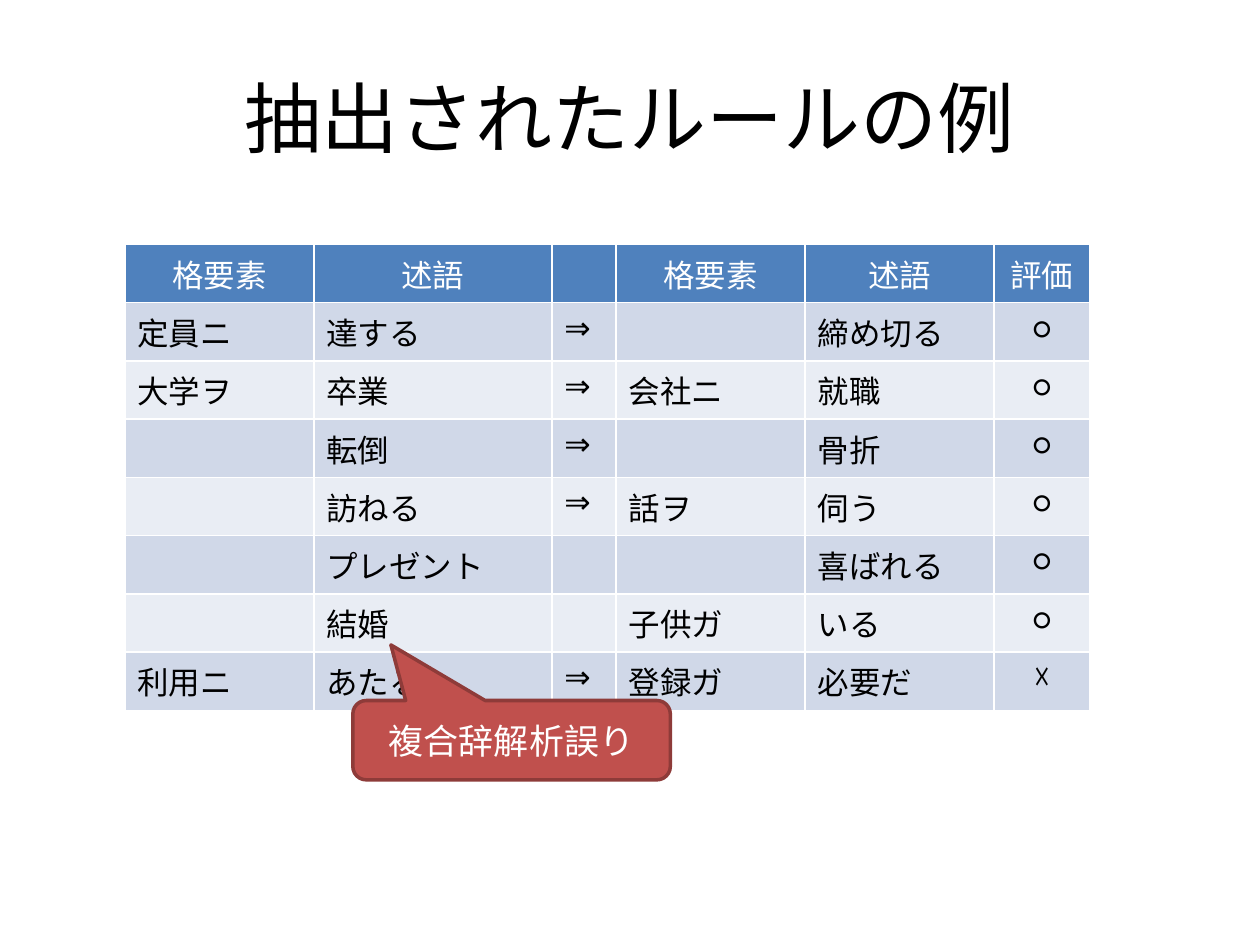
from pptx import Presentation
from pptx.dml.color import RGBColor
from pptx.enum.shapes import MSO_SHAPE
from pptx.enum.text import MSO_ANCHOR, PP_ALIGN
from pptx.util import Inches, Pt

TITLE = "抽出されたルールの例"
CALLOUT = "複合辞解析誤り"
HEADER = ("格要素", "述語", "", "格要素", "述語", "評価")
RULES = [
    ("定員ニ", "達する", "⇒", "", "締め切る", "○"),
    ("大学ヲ", "卒業", "⇒", "会社ニ", "就職", "○"),
    ("", "転倒", "⇒", "", "骨折", "○"),
    ("", "訪ねる", "⇒", "話ヲ", "伺う", "○"),
    ("", "プレゼント", "", "", "喜ばれる", "○"),
    ("", "結婚", "", "子供ガ", "いる", "○"),
    ("利用ニ", "あたる", "⇒", "登録ガ", "必要だ", "☓"),
]
COLUMN_WIDTHS = (1.5, 1.89, 0.51, 1.5, 1.5, 0.76)
TABLE_HEIGHT = 3.7
RATING_COLUMN = len(HEADER) - 1

FONT = "Calibri"
COLORS = {
    "text": "000000",
    "light text": "FFFFFF",
    "header": "4F81BD",
    "odd row": "D0D8E8",
    "even row": "E9EDF4",
    "callout": "C0504D",
    "callout line": "8E3B39",
}


def color(name):
    return RGBColor.from_string(COLORS[name])


def write(frame, text, size, color_name, align):
    frame.text = text
    para = frame.paragraphs[0]
    para.alignment = align
    for span in para.runs:
        span.font.name = FONT
        span.font.size = Pt(size)
        span.font.bold = False
        span.font.color.rgb = color(color_name)


def add_title(slide):
    box = slide.shapes.add_textbox(Inches(0.5), Inches(0.3), Inches(9), Inches(1.25))
    box.text_frame.word_wrap = True
    box.text_frame.vertical_anchor = MSO_ANCHOR.MIDDLE
    write(box.text_frame, TITLE, 44, "text", PP_ALIGN.CENTER)


def add_rule_table(slide):
    rows = [HEADER, *RULES]
    table = slide.shapes.add_table(
        len(rows), len(HEADER), Inches(0.99), Inches(1.94),
        Inches(sum(COLUMN_WIDTHS)), Inches(TABLE_HEIGHT),
    ).table
    for column, width in zip(table.columns, COLUMN_WIDTHS):
        column.width = Inches(width)
    for r, row in enumerate(rows):
        table.rows[r].height = Inches(TABLE_HEIGHT / len(rows))
        is_header = r == 0
        fill = "header" if is_header else "odd row" if r % 2 else "even row"
        for c, text in enumerate(row):
            cell = table.cell(r, c)
            cell.fill.solid()
            cell.fill.fore_color.rgb = color(fill)
            centred = is_header or c == RATING_COLUMN
            write(cell.text_frame, text, 18, "light text" if is_header else "text",
                  PP_ALIGN.CENTER if centred else PP_ALIGN.LEFT)


def add_callout(slide):
    callout = slide.shapes.add_shape(
        MSO_SHAPE.ROUNDED_RECTANGULAR_CALLOUT,
        Inches(2.8), Inches(5.56), Inches(2.52), Inches(0.63),
    )
    for index, value in enumerate((-0.38, -1.2, 0.17)):
        callout.adjustments[index] = value
    callout.shadow.inherit = False
    callout.fill.solid()
    callout.fill.fore_color.rgb = color("callout")
    callout.line.color.rgb = color("callout line")
    callout.line.width = Pt(2)
    callout.text_frame.vertical_anchor = MSO_ANCHOR.MIDDLE
    write(callout.text_frame, CALLOUT, 20, "light text", PP_ALIGN.CENTER)


def main():
    deck = Presentation()
    deck.slide_width, deck.slide_height = Inches(10), Inches(7.5)
    slide = deck.slides.add_slide(deck.slide_layouts[6])
    add_title(slide)
    add_rule_table(slide)
    add_callout(slide)
    deck.save("out.pptx")


if __name__ == "__main__":
    main()
